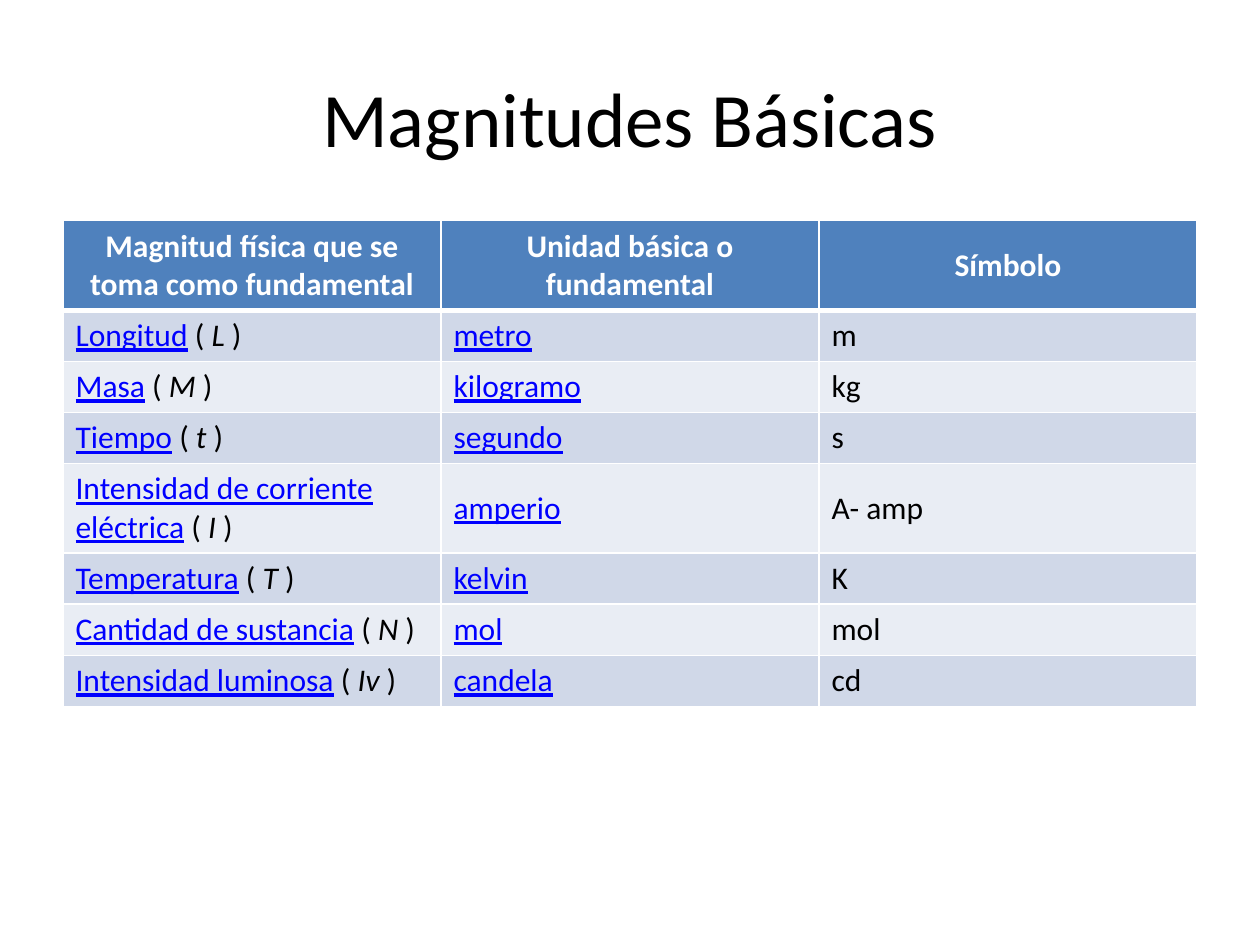
from lxml import etree
from pptx import Presentation
from pptx.dml.color import RGBColor
from pptx.enum.text import MSO_ANCHOR, PP_ALIGN
from pptx.oxml.ns import qn
from pptx.util import Cm, Pt

CENTER, LEFT = PP_ALIGN.CENTER, PP_ALIGN.LEFT
MIDDLE = MSO_ANCHOR.MIDDLE

BLACK = RGBColor(0x00, 0x00, 0x00)
WHITE = RGBColor(0xFF, 0xFF, 0xFF)
LINK_BLUE = RGBColor(0x00, 0x00, 0xFF)
HEADER_BLUE = RGBColor(0x4F, 0x81, 0xBD)
BANDS = (RGBColor(0xD0, 0xD8, 0xE8), RGBColor(0xE9, 0xED, 0xF4))

TITLE = "Magnitudes Básicas"
HEADINGS = (
    "Magnitud física que se toma como fundamental",
    "Unidad básica o fundamental",
    "Símbolo",
)
MAGNITUDES = (
    ("Longitud", "L", "metro", "m"),
    ("Masa", "M", "kilogramo", "kg"),
    ("Tiempo", "t", "segundo", "s"),
    ("Intensidad de corriente eléctrica", "I", "amperio", "A- amp"),
    ("Temperatura", "T", "kelvin", "K"),
    ("Cantidad de sustancia", "N", "mol", "mol"),
    ("Intensidad luminosa", "Iv", "candela", "cd"),
)

MARGIN, CONTENT_WIDTH = Cm(1.27), Cm(22.86)
ROW_HEIGHT = Cm(1.03)
THIN, THICK = Pt(1), Pt(3)


def add_text(paragraph, text, size=18, color=BLACK, bold=False, italic=False,
             underline=False, align=LEFT):
    paragraph.alignment = align
    run = paragraph.add_run()
    run.text = text
    font = run.font
    font.name, font.size, font.color.rgb = "Calibri", Pt(size), color
    font.bold, font.italic, font.underline = bold, italic, underline


def format_cell(cell, fill, top=THIN, bottom=THIN):
    cell.vertical_anchor = MIDDLE
    properties = cell._tc.get_or_add_tcPr()
    for side, width in (("L", THIN), ("R", THIN), ("T", top), ("B", bottom)):
        border = etree.SubElement(properties, qn(f"a:ln{side}"), w=str(width))
        line_fill = etree.SubElement(border, qn("a:solidFill"))
        etree.SubElement(line_fill, qn("a:srgbClr"), val=str(WHITE))
    cell.fill.solid()
    cell.fill.fore_color.rgb = fill
    return cell.text_frame.paragraphs[0]


def main():
    prs = Presentation()
    prs.slide_width, prs.slide_height = Cm(25.4), Cm(19.05)
    slide = prs.slides.add_slide(prs.slide_layouts[5])

    title = slide.shapes.title
    title.left, title.top = MARGIN, Cm(0.76)
    title.width, title.height = CONTENT_WIDTH, Cm(3.18)
    title.text_frame.vertical_anchor = MIDDLE
    add_text(title.text_frame.paragraphs[0], TITLE, size=44, align=CENTER)

    row_count = len(MAGNITUDES) + 1
    table = slide.shapes.add_table(
        row_count, len(HEADINGS), MARGIN, Cm(4.45),
        CONTENT_WIDTH, ROW_HEIGHT * row_count).table

    for column, heading in enumerate(HEADINGS):
        paragraph = format_cell(table.cell(0, column), HEADER_BLUE, bottom=THICK)
        add_text(paragraph, heading, color=WHITE, bold=True, align=CENTER)

    for row, (magnitude, letter, unit, symbol) in enumerate(MAGNITUDES, start=1):
        band = BANDS[(row - 1) % len(BANDS)]
        top = THICK if row == 1 else THIN
        name_text, unit_text, symbol_text = (
            format_cell(table.cell(row, column), band, top=top)
            for column in range(len(HEADINGS)))
        add_text(name_text, magnitude, color=LINK_BLUE, underline=True)
        add_text(name_text, " ( ")
        add_text(name_text, letter, italic=True)
        add_text(name_text, " )")
        add_text(unit_text, unit, color=LINK_BLUE, underline=True)
        add_text(symbol_text, symbol)

    prs.save("out.pptx")


if __name__ == "__main__":
    main()
